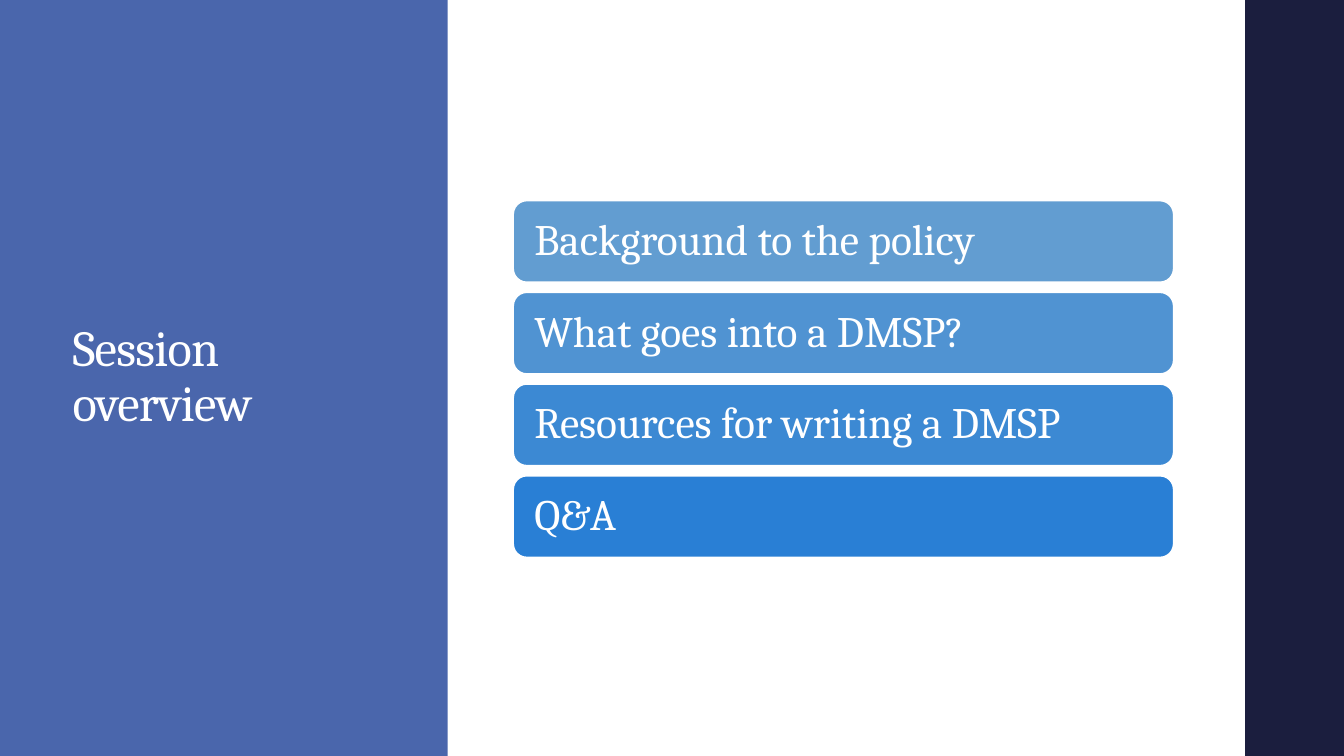
from pptx import Presentation
from pptx.dml.color import RGBColor
from pptx.enum import shapes as sh, text as tx
from pptx.util import Inches, Pt

FONT = "Cambria"
COLORS = {"panel": "4A66AC", "edge": "1B1E3E", "white": "FFFFFF"}
TOPICS = [
    ("Background to the policy", "629DD1"),
    ("What goes into a DMSP?", "5093D2"),
    ("Resources for writing a DMSP", "3C89D3"),
    ("Q&A", "297FD5"),
]


def add_box(slide, kind, left, top, width, height, fill):
    box = slide.shapes.add_shape(
        kind, Inches(left), Inches(top), Inches(width), Inches(height))
    box.shadow.inherit = False
    box.fill.solid()
    box.fill.fore_color.rgb = RGBColor.from_string(fill)
    box.line.fill.background()
    return box


def set_text(shape, words, size):
    frame = shape.text_frame
    frame.text = words
    frame.word_wrap = True
    frame.auto_size = tx.MSO_AUTO_SIZE.NONE
    frame.vertical_anchor = tx.MSO_ANCHOR.MIDDLE
    para = frame.paragraphs[0]
    para.alignment = tx.PP_ALIGN.LEFT
    para.line_spacing = 0.9
    para.font.size = Pt(size)
    para.font.name = FONT
    para.font.color.rgb = RGBColor.from_string(COLORS["white"])


def add_topic(slide, top, words, fill):
    bar = add_box(slide, sh.MSO_SHAPE.ROUNDED_RECTANGLE,
                  5.09, top, 6.55, 0.81, fill)
    bar.line.color.rgb = RGBColor.from_string(COLORS["white"])
    bar.line.width = Pt(1.1)
    frame = bar.text_frame
    frame.margin_left = frame.margin_right = Inches(0.17)
    set_text(bar, words, 31)


def set_title(slide, words):
    title = slide.shapes.title
    title.left, title.top = Inches(0.62), Inches(0.91)
    title.width, title.height = Inches(2.97), Inches(5.67)
    set_text(title, words, 36)
    # Tighten the letters by half a point
    run = title.text_frame.paragraphs[0].runs[0]
    run.font._element.set("spc", "-50")


def main():
    prs = Presentation()
    prs.slide_width, prs.slide_height = Inches(13.33), Inches(7.5)
    slide = prs.slides.add_slide(prs.slide_layouts[5])

    # Side panels, with the left one behind the title
    rect = sh.MSO_SHAPE.RECTANGLE
    panel = add_box(slide, rect, 0, 0, 4.44, 7.5, COLORS["panel"])
    slide.shapes.title._element.addprevious(panel._element)
    add_box(slide, rect, 12.35, 0, 0.98, 7.5, COLORS["edge"])

    # Title
    set_title(slide, "Session overview")

    # Topic bars at equal steps
    for i, (words, fill) in enumerate(TOPICS):
        add_topic(slide, 1.99 + 0.91 * i, words, fill)

    prs.save("out.pptx")


if __name__ == "__main__":
    main()
